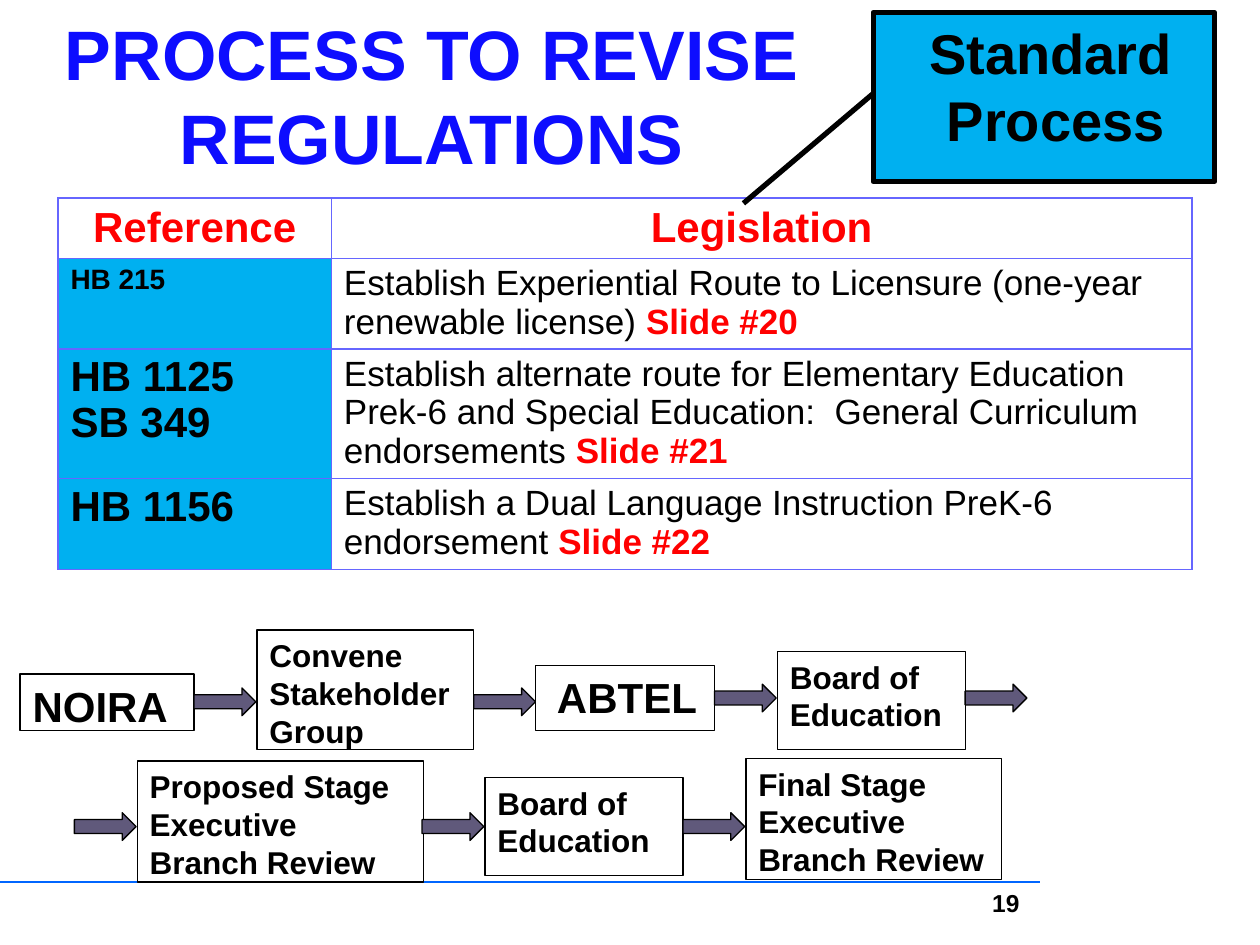
from lxml import etree
from pptx import Presentation
from pptx.dml.color import RGBColor
from pptx.enum.shapes import MSO_CONNECTOR, MSO_SHAPE
from pptx.enum.text import MSO_ANCHOR, PP_ALIGN
from pptx.oxml.ns import qn
from pptx.util import Inches, Pt

LEFT, CENTER, RIGHT = PP_ALIGN.LEFT, PP_ALIGN.CENTER, PP_ALIGN.RIGHT
TOP, MIDDLE = MSO_ANCHOR.TOP, MSO_ANCHOR.MIDDLE
CALLOUT = MSO_SHAPE.LINE_CALLOUT_1
PROCESS, ARROW = MSO_SHAPE.FLOWCHART_PROCESS, MSO_SHAPE.RIGHT_ARROW
BLACK, RED, CYAN, WHITE = "000000", "FF0000", "00B0F0", "FFFFFF"


def write(frame, text, size, color=BLACK, bold=True, align=LEFT, anchor=TOP,
          spacing=1.0, highlight=""):
    """Write one paragraph per line of text; highlight follows in bold red."""
    frame.word_wrap = True
    frame.vertical_anchor = anchor
    frame.text = text
    for paragraph in frame.paragraphs:
        paragraph.alignment = align
        paragraph.line_spacing = spacing
    runs = [(run, color, bold) for p in frame.paragraphs for run in p.runs]
    if highlight:
        run = frame.paragraphs[-1].add_run()
        run.text = highlight
        runs.append((run, RED, True))
    for run, run_color, run_bold in runs:
        run.font.name = "Arial"
        run.font.size = Pt(size)
        run.font.bold = run_bold
        run.font.color.rgb = RGBColor.from_string(run_color)


def add_outlined(kind, left, top, width, height, fill=None, line_width=0.75):
    shape = slide.shapes.add_shape(
        kind, Inches(left), Inches(top), Inches(width), Inches(height))
    shape.shadow.inherit = False
    if fill:
        shape.fill.solid()
        shape.fill.fore_color.rgb = RGBColor.from_string(fill)
    else:
        shape.fill.background()
    shape.line.color.rgb = RGBColor.from_string(BLACK)
    shape.line.width = Pt(line_width)
    return shape


presentation = Presentation()
presentation.slide_width, presentation.slide_height = Inches(10), Inches(7.5)
slide = presentation.slides.add_slide(presentation.slide_layouts[5])

# Footer rule
rule = slide.shapes.add_connector(
    MSO_CONNECTOR.STRAIGHT, Inches(8.25), Inches(7), Inches(0), Inches(7))
rule.line.color.rgb = RGBColor.from_string("0066FF")
rule.line.width = Pt(1.25)
etree.SubElement(rule._element.spPr, qn("a:effectLst"))

# Title
title = slide.shapes.title
title.left, title.top = Inches(0.11), Inches(0.05)
title.width, title.height = Inches(6.63), Inches(1.4)
write(title.text_frame, "PROCESS TO REVISE REGULATIONS", 40, "0D0DFF",
      align=CENTER, anchor=MIDDLE)

# Legislation table
legislation = [
    ("HB 215", 16, "Establish Experiential Route to Licensure "
     "(one-year renewable license) ", "Slide #20"),
    ("HB 1125\nSB 349", 24, "Establish alternate route for Elementary Education\n"
     "Prek-6 and Special Education:  General Curriculum endorsements ",
     "Slide #21"),
    ("HB 1156", 24, "Establish a Dual Language Instruction PreK-6 endorsement ",
     "Slide #22"),
]
table = slide.shapes.add_table(
    len(legislation) + 1, 2, Inches(0.46), Inches(1.57), Inches(9),
    Inches(2.95)).table
for column, width in zip(table.columns, (2.17, 6.83)):
    column.width = Inches(width)
for row, height in zip(table.rows, (0.48, 0.72, 1.03, 0.72)):
    row.height = Inches(height)
for column, heading in enumerate(("Reference", "Legislation")):
    write(table.cell(0, column).text_frame, heading, 24, RED, align=CENTER)
    table.cell(0, column).vertical_anchor = MIDDLE
for row, (reference, size, summary, pointer) in enumerate(legislation, 1):
    write(table.cell(row, 0).text_frame, reference, size, spacing=0.98)
    write(table.cell(row, 1).text_frame, summary, 20, bold=False,
          spacing=0.99, highlight=pointer)
for row in range(len(table.rows)):
    for column in range(2):
        cell = table.cell(row, column)
        cell_properties = cell._tc.get_or_add_tcPr()
        for side in ("a:lnL", "a:lnR", "a:lnT", "a:lnB"):
            border = etree.SubElement(cell_properties, qn(side), w=str(Pt(1)))
            border_fill = etree.SubElement(border, qn("a:solidFill"))
            etree.SubElement(border_fill, qn("a:srgbClr"), val="6666FF")
        cell.fill.solid()
        cell.fill.fore_color.rgb = RGBColor.from_string(
            CYAN if row and column == 0 else WHITE)

# Callout pointing at the table
callout = add_outlined(CALLOUT, 6.93, 0.1, 2.71, 1.34, CYAN, 3)
for index, value in enumerate((0.48, 0, 1.13, -0.38)):
    callout.adjustments[index] = value
write(callout.text_frame, "Standard Process", 32, align=CENTER)
properties = callout.text_frame.paragraphs[0]._p.get_or_add_pPr()
properties.set("marL", str(Inches(0.19)))
properties.set("indent", str(Inches(-0.08)))

# Process flow: left, top, width, height, text size, left inset, text
steps = [
    (0.16, 5.35, 1.38, 0.45, 24, 0.1, "NOIRA"),
    (2.04, 5, 1.72, 0.95, 18, 0.1, "Convene Stakeholder Group"),
    (4.25, 5.28, 1.42, 0.52, 24, 0.17, "ABTEL"),
    (6.17, 5.17, 1.49, 0.78, 18, 0.1, "Board of Education"),
    (1.09, 6.04, 2.27, 0.96, 18, 0.1, "Proposed Stage\nExecutive Branch Review"),
    (3.85, 6.17, 1.57, 0.78, 18, 0.1, "Board of Education"),
    (5.92, 6.02, 2.03, 0.96, 18, 0.1, "Final Stage\nExecutive Branch Review"),
]
for left, top, width, height, size, inset, text in steps:
    step = add_outlined(PROCESS, left, top, width, height)
    step.text_frame.margin_left = Inches(inset)
    step.text_frame.margin_top = Inches(0.05)
    step.text_frame.margin_bottom = Inches(0)
    write(step.text_frame, text, size)

arrows = [(1.54, 5.46), (3.76, 5.46), (5.67, 5.43), (7.66, 5.43),
          (0.59, 6.45), (3.35, 6.45), (5.42, 6.45)]
for left, top in arrows:
    add_outlined(ARROW, left, top, 0.49, 0.22, "60597B")

# Slide number
number = slide.shapes.add_textbox(
    Inches(7.66), Inches(7), Inches(0.53), Inches(0.5))
write(number.text_frame, "19", 14, align=RIGHT)

presentation.save("out.pptx")
